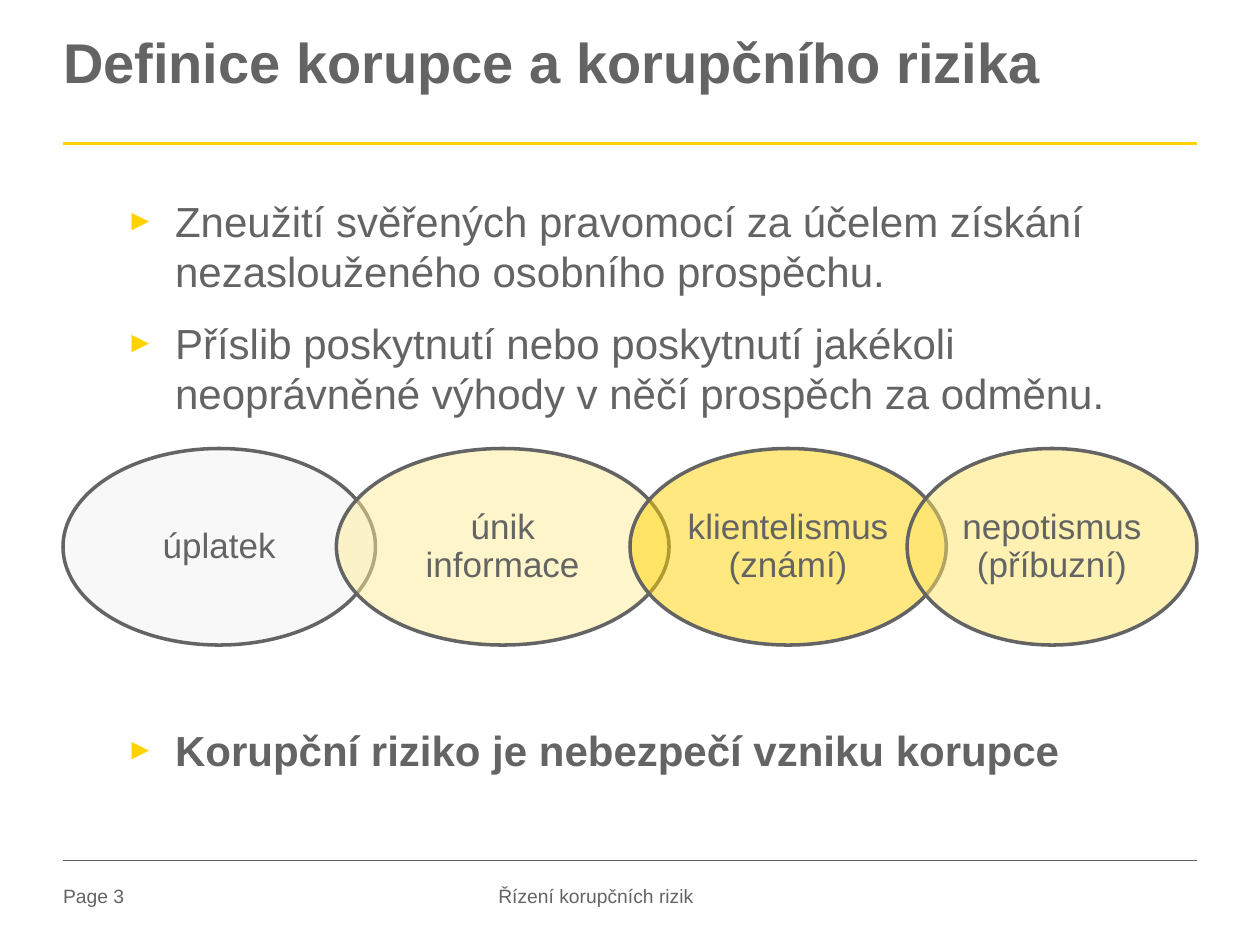
from lxml.etree import SubElement
from pptx import Presentation
from pptx.dml.color import RGBColor
from pptx.enum.shapes import MSO_CONNECTOR as Connector, MSO_SHAPE as Shape
from pptx.enum.text import MSO_ANCHOR as Anchor, MSO_AUTO_SIZE as AutoSize, PP_ALIGN as Align
from pptx.oxml.ns import qn
from pptx.util import Inches, Pt

WIDTH, HEIGHT = 10, 7.5
MARGIN = 0.05 * WIDTH
CONTENT = WIDTH - 2 * MARGIN
FONT = "Arial"
COLORS = {"text": "646464", "accent": "FFD200", "grey": "F2F2F2",
          "pale": "FFED99", "light": "FFE466"}

DEFINITIONS = [
    "Zneužití svěřených pravomocí za účelem získání nezaslouženého osobního prospěchu.",
    "Příslib poskytnutí nebo\u00a0poskytnutí jakékoli neoprávněné výhody v něčí prospěch za odměnu.",
]
RISK = ["Korupční riziko je nebezpečí vzniku korupce"]
# Label, fill, left and width of each form of corruption
FORMS = [
    ("úplatek", "grey", 0, 2.48),
    ("únik informace", "pale", 2.17, 2.64),
    ("klientelismus\v(známí)", "accent", 4.5, 2.51),
    ("nepotismus (příbuzní)", "light", 6.7, 2.3),
]


def color(name):
    return RGBColor.from_string(COLORS[name])


def set_frame(frame, anchor=Anchor.TOP, side=0, edge=0):
    frame.word_wrap = True
    frame.auto_size = AutoSize.NONE
    frame.vertical_anchor = anchor
    frame.margin_left = frame.margin_right = Inches(side)
    frame.margin_top = frame.margin_bottom = Inches(edge)


def set_para(para, text, size, bold=False, align=Align.LEFT):
    para.text = text
    para.alignment = align
    para.font.name, para.font.size, para.font.bold = FONT, Pt(size), bold
    para.font.color.rgb = color("text")


def add_text(page, box, text, size, align=Align.LEFT):
    frame = page.shapes.add_textbox(*map(Inches, box)).text_frame
    set_frame(frame)
    set_para(frame.paragraphs[0], text, size, align=align)


def add_rule(page, top, name, weight):
    line = page.shapes.add_connector(
        Connector.STRAIGHT, *map(Inches, (MARGIN, top, MARGIN + CONTENT, top)))
    line.line.color.rgb = color(name)
    line.line.width = Pt(weight)
    SubElement(line._element.spPr, qn("a:effectLst"))


def add_bullet(para):
    props = para._p.get_or_add_pPr()
    props.set("marL", str(Inches(0.89)))
    props.set("indent", str(Inches(-0.39)))
    tint = SubElement(props, qn("a:buClr"))
    SubElement(tint, qn("a:srgbClr"), val=COLORS["accent"])
    SubElement(props, qn("a:buSzPct"), val="70000")
    SubElement(props, qn("a:buFont"), typeface=FONT)
    SubElement(props, qn("a:buChar"), char="►")


def add_heading(page, box):
    title = page.shapes.title
    title.left, title.top, title.width, title.height = map(Inches, box)
    set_frame(title.text_frame)
    para = title.text_frame.paragraphs[0]
    set_para(para, "Definice korupce a korupčního rizika", 32, bold=True)
    para.line_spacing = 0.85


def add_bullets(page, box, items, bold=False):
    frame = page.shapes.add_textbox(*map(Inches, box)).text_frame
    set_frame(frame)
    for index, item in enumerate(items):
        para = frame.add_paragraph() if index else frame.paragraphs[0]
        set_para(para, item, 24, bold)
        para.space_before = para.space_after = Pt(6)
        add_bullet(para)


def add_chain(page, box):
    """Row of overlapping half-transparent ellipses."""
    left, top, width, height = box
    for label, fill, offset, span in FORMS:
        place = (left + offset / CONTENT * width, top, span / CONTENT * width, height)
        oval = page.shapes.add_shape(Shape.OVAL, *map(Inches, place))
        oval.shadow.inherit = False
        oval.fill.solid()
        oval.fill.fore_color.rgb = color(fill)
        tint = oval.fill._xPr.find(qn("a:solidFill"))[0]
        SubElement(tint, qn("a:alpha"), val="50000")
        oval.line.color.rgb = color("text")
        oval.line.width = Pt(2)
        set_frame(oval.text_frame, Anchor.MIDDLE, side=0.08, edge=0.03)
        para = oval.text_frame.paragraphs[0]
        set_para(para, label, 20, align=Align.CENTER)
        para.line_spacing = 0.9


def add_footer(page, box):
    left, top, width, height = box
    add_text(page, (left, top, 0.09 * width, height), "Page 3", 11)
    add_text(page, (left + 0.26 * width, top, 0.42 * width, height),
             "Řízení korupčních rizik", 11, Align.CENTER)


def main():
    deck = Presentation()
    deck.slide_width, deck.slide_height = Inches(WIDTH), Inches(HEIGHT)
    page = deck.slides.add_slide(deck.slide_layouts[5])

    # Heading and rules
    add_heading(page, (MARGIN, 0.04 * HEIGHT, CONTENT, 0.94))
    add_rule(page, 1.14, "accent", 1.5)
    add_rule(page, 6.83, "text", 0.25)

    # Definitions, forms of corruption, conclusion
    add_bullets(page, (MARGIN, 1.55, CONTENT, 1.95), DEFINITIONS)
    add_chain(page, (MARGIN, 3.56, CONTENT, 1.56))
    add_bullets(page, (MARGIN, 5.75, CONTENT, 0.95), RISK, bold=True)

    # Footer
    add_footer(page, (MARGIN, 7.02, CONTENT, 0.22))
    deck.save("out.pptx")


if __name__ == "__main__":
    main()
